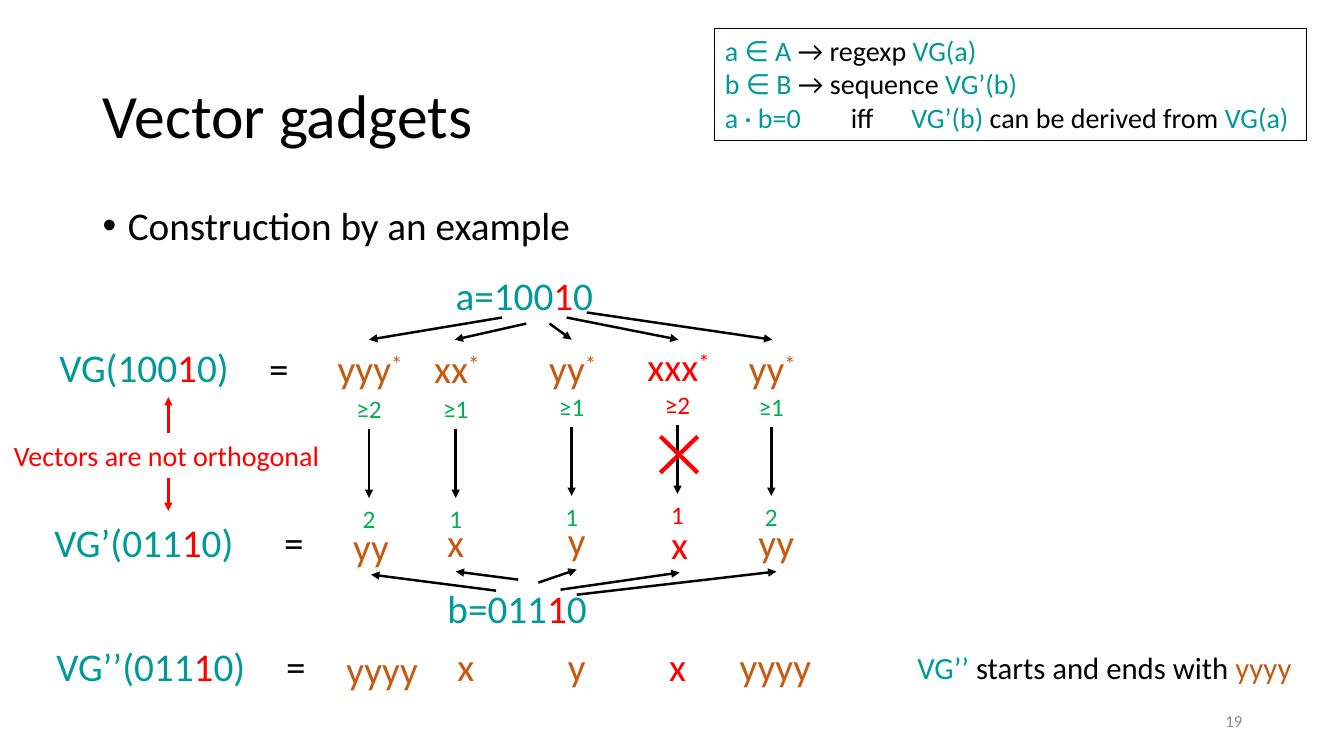
import pptx
import pptx.util
import pptx.dml.color
import pptx.enum.shapes
import pptx.enum.text
import pptx.oxml.ns
import lxml.etree

COLORS = {"black": "000000", "teal": "009999", "red": "FF0000",
          "orange": "C55A11", "green": "00B050", "gray": "8C8C8C"}
LEFT, CENTER, RIGHT = (pptx.enum.text.PP_ALIGN.LEFT, pptx.enum.text.PP_ALIGN.CENTER,
                       pptx.enum.text.PP_ALIGN.RIGHT)
MIDDLE = pptx.enum.text.MSO_ANCHOR.MIDDLE
Inches = pptx.util.Inches
qn = pptx.oxml.ns.qn

presentation = pptx.Presentation()
presentation.slide_width, presentation.slide_height = Inches(13.33), Inches(7.5)
slide = presentation.slides.add_slide(presentation.slide_layouts[6])


def write(lines, left, top, width, size, height=None, align=LEFT, **frame_format):
    """Add a text box; lines is a list of paragraphs, each a list of (color, text)."""
    height = height or round(size * 1.22 / 72 + 0.1, 2)
    shape = slide.shapes.add_textbox(*map(Inches, (left, top, width, height)))
    for name, value in {"word_wrap": False, **frame_format}.items():
        setattr(shape.text_frame, name, value)
    for index, runs in enumerate(lines):
        frame = shape.text_frame
        paragraph = frame.add_paragraph() if index else frame.paragraphs[0]
        paragraph.alignment = align
        for color, text in runs:
            run = paragraph.add_run()
            run.text = text
            for name, value in {"name": "Calibri", "size": pptx.util.Pt(size)}.items():
                setattr(run.font, name, value)
            run.font.color.rgb = pptx.dml.color.RGBColor.from_string(COLORS[color])
            if text == "*":
                run.font._element.set("baseline", "30000")
    return shape


def draw_line(start, end, color="black", width=1.75, arrow=True):
    connector = slide.shapes.add_connector(
        pptx.enum.shapes.MSO_CONNECTOR.STRAIGHT, *map(Inches, (*start, *end)))
    connector.line.color.rgb = pptx.dml.color.RGBColor.from_string(COLORS[color])
    connector.line.width = pptx.util.Pt(width)
    properties = connector._element.spPr
    if arrow:
        lxml.etree.SubElement(properties.find(qn("a:ln")), qn("a:tailEnd"), type="triangle")
    lxml.etree.SubElement(properties, qn("a:effectLst"))


# Title, bullet and slide number
write([[("black", "Vector gadgets")]], 0.92, 0.4, 11.5, 44, 1.45,
      word_wrap=True, vertical_anchor=MIDDLE)
bullet = write([[("black", "Construction by an example")]], 0.92, 2, 11.5, 28, 0.56,
               word_wrap=True).text_frame.paragraphs[0]
bullet.line_spacing = 0.9
bullet_properties = bullet._p.get_or_add_pPr()
for name, value in {"marL": Inches(0.25), "indent": Inches(-0.25)}.items():
    bullet_properties.set(name, str(value))
lxml.etree.SubElement(bullet_properties, qn("a:buFont"), typeface="Arial")
lxml.etree.SubElement(bullet_properties, qn("a:buChar"), char="•")
write([[("gray", "19")]], 9.42, 6.95, 3, 12, 0.4, RIGHT, vertical_anchor=MIDDLE, word_wrap=True)

# Framed rules
rules = write([
    [("teal", "a ∈ A "), ("black", "→ regexp "), ("teal", "VG(a)")],
    [("teal", "b ∈ B "), ("black", "→ sequence"), ("teal", " VG’(b)")],
    [("teal", "a · b=0\t"), ("black", "iff\t"), ("teal", "VG’(b) "),
     ("black", "can be derived from "), ("teal", "VG(a)")],
], 7.09, 0.28, 5.87, 20, 1.11, word_wrap=True)
rules.line.color.rgb = pptx.dml.color.RGBColor.from_string(COLORS["black"])
rules.line.width = pptx.util.Pt(0.75)
tab_list = lxml.etree.SubElement(
    rules.text_frame.paragraphs[2]._p.get_or_add_pPr(), qn("a:tabLst"))
for stop in (1.25, 1.85):
    lxml.etree.SubElement(tab_list, qn("a:tab"), pos=str(Inches(stop)), algn="l")

# Vectors and gadget names: the fourth coordinate is red
for head, tail, left, top, width in (
        ("VG(100", "0)", 0.49, 3.36, 1.9), ("a=100", "0", 4.42, 2.64, 1.59),
        ("VG’(011", "0)", 0.44, 5.09, 2), ("b=011", "0", 4.34, 5.75, 1.6),
        ("VG’’(011", "0)", 0.46, 6.32, 2.09)):
    write([[("teal", head), ("red", "1"), ("teal", tail)]], left, top, width, 28)
for left, top in ((2.57, 3.37), (2.72, 5.09), (2.74, 6.32)):
    write([[("black", "=")]], left, top, 0.4, 28)

# One column per coordinate: centre, rise, letter, repeats in VG, VG' and VG'',
# shift of VG' and VG'' from the centre, top of VG'
LETTER_WIDTHS = {"x": 0.17, "y": 0.18}
columns = (
    (3.66, 0, "y", 3, 2, 4, 0.02, 0.13, 5.13),
    (4.52, 0, "x", 2, 1, 1, 0, 0.1, 5.09),
    (5.67, 0.02, "y", 2, 1, 1, 0.05, 0.05, 5.07),
    (6.72, 0.04, "x", 3, 1, 1, 0.02, 0, 5.11),
    (7.65, 0.02, "y", 2, 2, 4, 0.05, 0.04, 5.09),
)
for index, (center, rise, letter, pattern, sequence, padded,
            shift, padded_shift, sequence_top) in enumerate(columns):
    clash = index == 3
    letter_color, count_color = ("red", "red") if clash else ("orange", "green")
    pattern_top = 3.35 if clash else 3.37
    padded_top = 6.35 if index == 0 else 6.32
    for repeats, star, middle, top in (
            (pattern, "*", center + 0.01, pattern_top),
            (sequence, "", center + shift, sequence_top),
            (padded, "", center + padded_shift, padded_top)):
        width = 0.2 + repeats * LETTER_WIDTHS[letter] + 0.13 * len(star)
        runs = [(letter_color, letter * repeats)] + [(letter_color, mark) for mark in star]
        write([runs], middle - width / 2, top, width, 28, align=CENTER)
    for text, top, width in ((f"≥{pattern - 1}", 3.85, 0.46), (str(sequence), 4.94, 0.33)):
        write([[(count_color, text)]], center - width / 2, top - rise, width, 18, align=CENTER)
    draw_line((center, 4.26 - rise), (center, 4.94 - rise))

# Arrows from each vector's coordinates to the gadgets
for start, end in (
        ((4.98, 3.15), (3.66, 3.37)), ((5.22, 3.21), (4.51, 3.37)),
        ((5.45, 3.21), (5.67, 3.37)), ((5.62, 3.15), (6.73, 3.37)),
        ((5.82, 3.1), (7.66, 3.37)), ((4.92, 5.86), (3.68, 5.7)),
        ((5.14, 5.75), (4.52, 5.67)), ((5.34, 5.78), (5.72, 5.65)),
        ((5.56, 5.85), (6.74, 5.68)), ((5.72, 5.9), (7.7, 5.67))):
    draw_line(start, end)

# Cross over the impossible derivation
for start_y, end_y in ((4.33, 4.69), (4.69, 4.33)):
    draw_line((6.55, start_y), (6.92, end_y), "red", 3, arrow=False)

# Remarks
write([[("red", "Vectors are not orthogonal")]], 0.04, 4.3, 3.26, 20)
for start_y, end_y in ((4.3, 3.94), (4.74, 5.07)):
    draw_line((1.67, start_y), (1.67, end_y), "red")
write([[("teal", "VG’’"), ("black", " starts and ends with "), ("orange", "yyyy")]],
      9, 6.39, 3.96, 22)

presentation.save("out.pptx")
